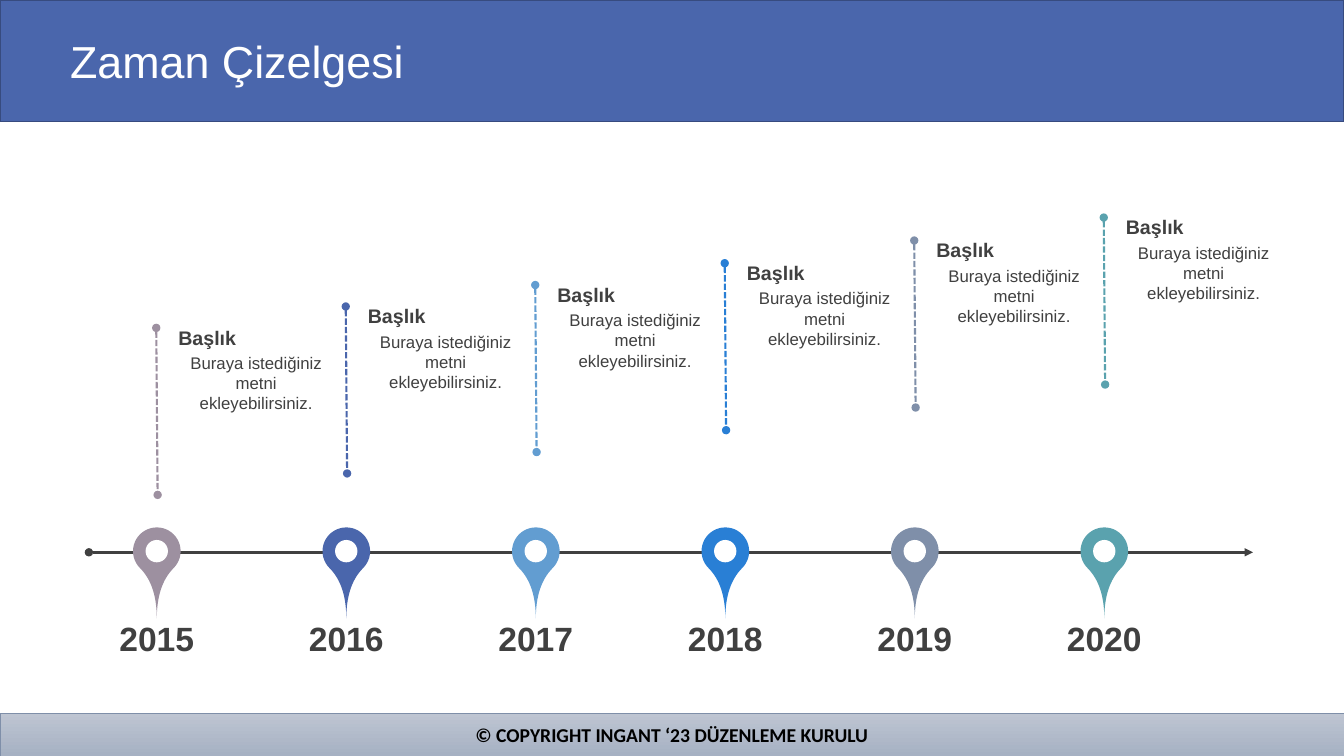
from dataclasses import dataclass

from lxml.etree import SubElement
from pptx import Presentation
from pptx.dml.color import RGBColor
from pptx.enum.dml import MSO_LINE_DASH_STYLE as Dash
from pptx.enum.shapes import MSO_CONNECTOR as Connector, MSO_SHAPE as Preset
from pptx.enum.text import MSO_ANCHOR as Anchor, PP_ALIGN as Align
from pptx.oxml.ns import qn
from pptx.util import Pt

WIDTH, HEIGHT = 960, 540
DARK, WHITE = "404040", "FFFFFF"
AXIS_Y = 394.5
FIRST_X, YEAR_STEP = 112, 135.36
PIN_SIZE, HOLE_SIZE = 34, 16
STEM_HEIGHT = 119.3


@dataclass(frozen=True)
class Milestone:
    year: str
    color: str
    stem_top: float


MILESTONES = [
    Milestone("2015", "9D90A0", 234.2),
    Milestone("2016", "4A66AC", 218.9),
    Milestone("2017", "629DD1", 203.6),
    Milestone("2018", "297FD5", 188),
    Milestone("2019", "7F8FA9", 171.8),
    Milestone("2020", "5AA2AE", 155.4),
]


def rgb(value: str) -> RGBColor:
    return RGBColor.from_string(value)


def write(shape, text: str, *, size: float, color: str = DARK, font: str = "Arial",
          bold: bool = False, align=Align.LEFT, anchor=Anchor.TOP,
          insets: tuple[float, float] = (7.2, 3.6), line_spacing: float = 1.0) -> None:
    """Fill a shape with one formatted paragraph; insets are (side, top and bottom)."""
    frame = shape.text_frame
    frame.word_wrap = True
    frame.vertical_anchor = anchor
    frame.margin_left = frame.margin_right = Pt(insets[0])
    frame.margin_top = frame.margin_bottom = Pt(insets[1])
    paragraph = frame.paragraphs[0]
    paragraph.alignment = align
    paragraph.line_spacing = line_spacing
    run = paragraph.add_run()
    run.text = text
    run.font.name = font
    run.font.size = Pt(size)
    run.font.bold = bold
    run.font.color.rgb = rgb(color)


def add_text(shapes, left: float, top: float, width: float, height: float,
             text: str, **style) -> None:
    write(shapes.add_textbox(Pt(left), Pt(top), Pt(width), Pt(height)), text, **style)


def add_figure(shapes, preset, left: float, top: float, width: float, height: float,
               fill: str):
    figure = shapes.add_shape(preset, Pt(left), Pt(top), Pt(width), Pt(height))
    figure.shadow.inherit = False
    figure.fill.solid()
    figure.fill.fore_color.rgb = rgb(fill)
    figure.line.fill.background()
    return figure


def set_outline(figure, color: str, width: float) -> None:
    figure.line.color.rgb = rgb(color)
    figure.line.width = Pt(width)


def add_line(shapes, start: tuple[float, float], end: tuple[float, float], color: str,
             width: float, tail: str, dash=None) -> None:
    line = shapes.add_connector(Connector.STRAIGHT, *map(Pt, start + end))
    set_outline(line, color, width)
    if dash is not None:
        line.line.dash_style = dash
    outline = line.line._get_or_add_ln()
    SubElement(outline, qn("a:headEnd"), type="oval")
    SubElement(outline, qn("a:tailEnd"), type=tail)
    SubElement(line._element.spPr, qn("a:effectLst"))


def add_header(shapes) -> None:
    band = add_figure(shapes, Preset.RECTANGLE, 0, 0, WIDTH, 87, "4A66AC")
    set_outline(band, "374B7F", 1)
    add_text(shapes, 43, 17, 937 - 43, 57, "Zaman Çizelgesi", size=32, color=WHITE,
             anchor=Anchor.MIDDLE, line_spacing=0.9)


def add_footer(shapes) -> None:
    band = add_figure(shapes, Preset.RECTANGLE, 0, 509.3, WIDTH, HEIGHT - 509.3, "B2BBC9")
    band.fill.gradient()
    band.fill.gradient_angle = 270
    for stop, color in zip(band.fill.gradient_stops, ("BEC5D2", "A6B1C3")):
        stop.color.rgb = rgb(color)
    set_outline(band, "7F8FA9", 0.5)
    write(band, "© COPYRIGHT INGANT ‘23 DÜZENLEME KURULU", size=14, color="000000",
          font="Calibri", bold=True, align=Align.CENTER, anchor=Anchor.MIDDLE)


def add_pin(shapes, milestone: Milestone, x: float) -> None:
    pin = add_figure(shapes, Preset.TEAR, x - PIN_SIZE / 2, 376.7, PIN_SIZE, PIN_SIZE,
                     milestone.color)
    pin.adjustments[0] = 2
    pin.rotation = 135
    add_text(shapes, x - 43, 441.5, 86, 29, milestone.year, size=24, bold=True,
             align=Align.CENTER, insets=(0, 0))
    add_figure(shapes, Preset.OVAL, x - HOLE_SIZE / 2, 385.7, HOLE_SIZE, HOLE_SIZE, WHITE)


def add_card(shapes, milestone: Milestone, x: float) -> None:
    top = milestone.stem_top
    card = shapes.add_group_shape().shapes
    add_text(card, x + 9, top + 14.3, 124, 36, "Buraya istediğiniz metni ekleyebilirsiniz.",
             size=12, align=Align.CENTER)
    add_text(card, x + 6.8, top - 5.1, 124.5, 24.5, "Başlık", size=14, bold=True,
             insets=(8.6, 3.6))
    add_line(card, (x - 0.4, top), (x + 0.6, top + STEM_HEIGHT), milestone.color, 1.5,
             tail="oval", dash=Dash.SQUARE_DOT)


def main() -> None:
    deck = Presentation()
    deck.slide_width, deck.slide_height = Pt(WIDTH), Pt(HEIGHT)
    shapes = deck.slides.add_slide(deck.slide_layouts[6]).shapes

    # Bands at the top and bottom
    add_header(shapes)
    add_footer(shapes)

    # Time axis with a pin and a rising card for each year
    add_line(shapes, (63.5, AXIS_Y), (895, AXIS_Y), DARK, 1.75, tail="triangle")
    for index, milestone in enumerate(MILESTONES):
        x = FIRST_X + index * YEAR_STEP
        add_pin(shapes, milestone, x)
        add_card(shapes, milestone, x)

    deck.save("out.pptx")


if __name__ == "__main__":
    main()
